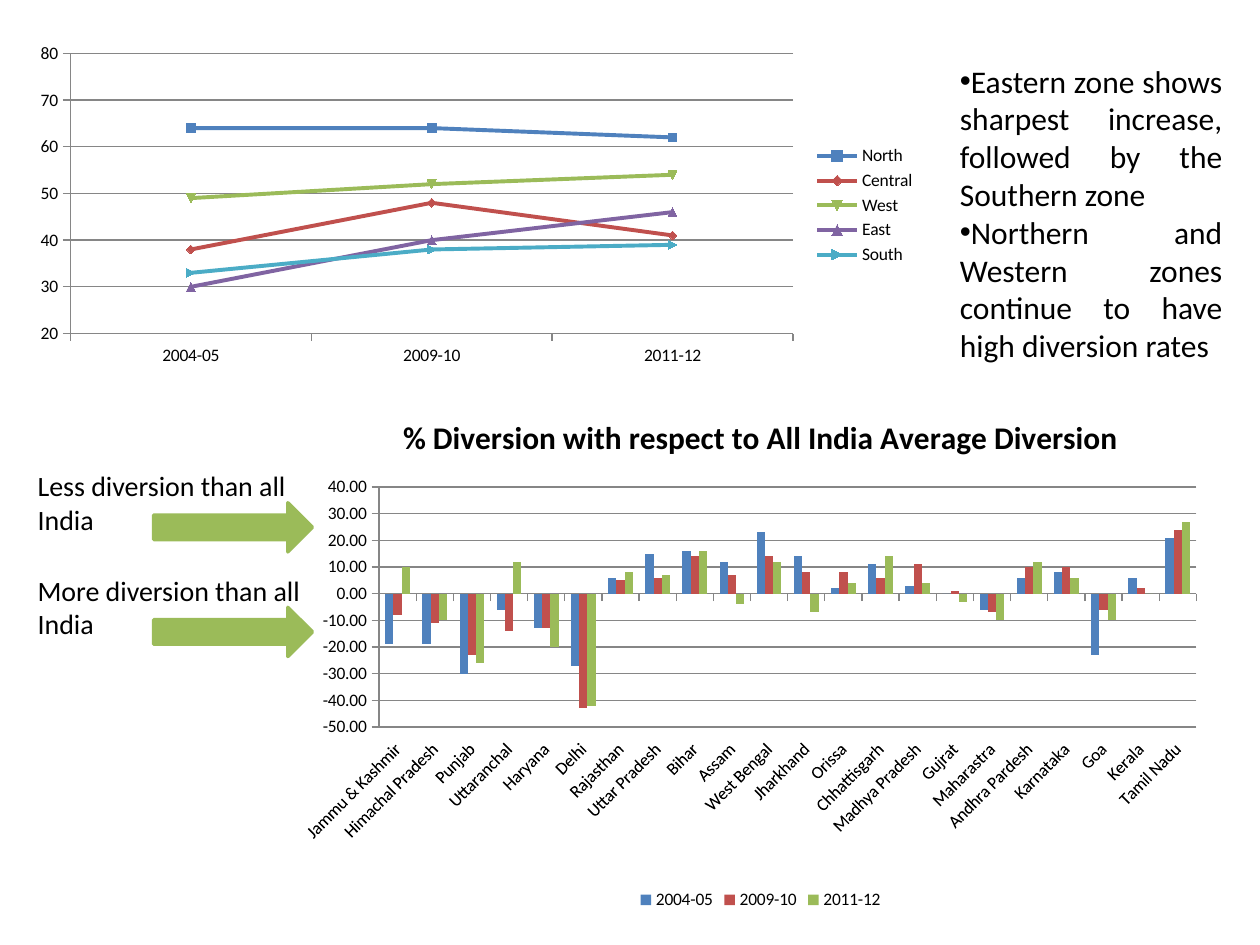
from lxml import etree
from pptx import Presentation
from pptx.chart.data import CategoryChartData
from pptx.dml.color import RGBColor
from pptx.enum.chart import XL_CHART_TYPE, XL_LEGEND_POSITION, XL_TICK_LABEL_POSITION, XL_TICK_MARK
from pptx.enum.shapes import MSO_SHAPE
from pptx.enum.text import PP_ALIGN
from pptx.oxml.ns import qn
from pptx.util import Inches, Pt

LINE, COLUMN = XL_CHART_TYPE.LINE_MARKERS, XL_CHART_TYPE.COLUMN_CLUSTERED
RIGHT, BOTTOM = XL_LEGEND_POSITION.RIGHT, XL_LEGEND_POSITION.BOTTOM
LOW, OUTSIDE, NONE = XL_TICK_LABEL_POSITION.LOW, XL_TICK_MARK.OUTSIDE, XL_TICK_MARK.NONE
RIGHT_ARROW, JUSTIFY = MSO_SHAPE.RIGHT_ARROW, PP_ALIGN.JUSTIFY

THEME = {
    "font": "Calibri", "text": "000000", "axis": "868686", "arrow": "9BBB59",
    "series": ["4F81BD", "C0504D", "9BBB59", "8064A2", "4BACC6"],
    "chart_size": 10, "title_size": 18, "findings_size": 18, "label_size": 16,
}

YEARS = ["2004-05", "2009-10", "2011-12"]
ZONES = {
    "North": [64, 64, 62],
    "Central": [38, 48, 41],
    "West": [49, 52, 54],
    "East": [30, 40, 46],
    "South": [33, 38, 39],
}
STATES = {
    "Jammu & Kashmir": (-19, -8, 10),
    "Himachal Pradesh": (-19, -11, -10),
    "Punjab": (-30, -23, -26),
    "Uttaranchal": (-6, -14, 12),
    "Haryana": (-13, -13, -20),
    "Delhi": (-27, -43, -42),
    "Rajasthan": (6, 5, 8),
    "Uttar Pradesh": (15, 6, 7),
    "Bihar": (16, 14, 16),
    "Assam": (12, 7, -4),
    "West Bengal": (23, 14, 12),
    "Jharkhand": (14, 8, -7),
    "Orissa": (2, 8, 4),
    "Chhattisgarh": (11, 6, 14),
    "Madhya Pradesh": (3, 11, 4),
    "Gujrat": (0, 1, -3),
    "Maharastra": (-6, -7, -10),
    "Andhra Pardesh": (6, 10, 12),
    "Karnataka": (8, 10, 6),
    "Goa": (-23, -6, -10),
    "Kerala": (6, 2, 0),
    "Tamil Nadu": (21, 24, 27),
}
STATE_TITLE = "% Diversion with respect to All India Average Diversion"
FINDINGS = [
    "Eastern zone shows sharpest increase, followed by the Southern zone",
    "Northern and Western zones continue to have high diversion rates",
]
ARROW_LABELS = ["Less diversion than all India", "More diversion than all India"]
LABEL_TOP, LABEL_STEP, ARROW_OFFSET = 3.67, 0.83, 0.32


def color(name):
    return RGBColor.from_string(name)


def set_font(font, size, bold=None):
    font.name = THEME["font"]
    font.size = Pt(size)
    font.bold = bold
    font.color.rgb = color(THEME["text"])


def set_plot_layout(chart, fractions):
    plot_area = chart._chartSpace.chart.plotArea
    for old_layout in plot_area.findall(qn("c:layout")):
        plot_area.remove(old_layout)
    layout = etree.Element(qn("c:layout"))
    manual = etree.SubElement(layout, qn("c:manualLayout"))
    settings = [("layoutTarget", "inner"), ("xMode", "edge"), ("yMode", "edge")]
    settings += zip("xywh", fractions)
    for tag, value in settings:
        etree.SubElement(manual, qn(f"c:{tag}")).set("val", str(value))
    plot_area.insert(0, layout)


def add_chart(slide, kind, box, categories, series, scale, number_format, legend, layout):
    data = CategoryChartData(number_format=number_format)
    data.categories = categories
    for name, values in series.items():
        data.add_series(name, values)
    chart = slide.shapes.add_chart(kind, *map(Inches, box), data).chart
    set_font(chart.font, THEME["chart_size"])
    chart.has_title = False
    chart.has_legend = True
    chart.legend.position = legend
    chart.legend.include_in_layout = False
    for axis in (chart.category_axis, chart.value_axis):
        axis.major_tick_mark = OUTSIDE
        axis.minor_tick_mark = NONE
        axis.format.line.color.rgb = color(THEME["axis"])
    value_axis = chart.value_axis
    value_axis.minimum_scale, value_axis.maximum_scale = scale
    value_axis.major_unit = 10
    value_axis.tick_labels.number_format = number_format
    value_axis.tick_labels.number_format_is_linked = False
    value_axis.has_major_gridlines = True
    value_axis.major_gridlines.format.line.color.rgb = color(THEME["axis"])
    chart.plots[0].vary_by_categories = False
    set_plot_layout(chart, layout)
    return chart


def add_text(slide, box, lines, size):
    frame = slide.shapes.add_textbox(*map(Inches, box)).text_frame
    frame.word_wrap = True
    frame.text = "\n".join(lines)
    for paragraph in frame.paragraphs:
        set_font(paragraph.font, size)
    return frame


def add_zone_chart(slide):
    chart = add_chart(slide, LINE, (0.2, 0.29, 7.17, 2.68), YEARS, ZONES, (20, 80),
                      "General", RIGHT, (0.05, 0.05, 0.8, 0.83))
    for series, tone in zip(chart.plots[0].series, THEME["series"]):
        series.smooth = False
        series.format.line.color.rgb = color(tone)
        series.format.line.width = Pt(2.25)
        series.marker.size = 5
        series.marker.format.fill.solid()
        series.marker.format.fill.fore_color.rgb = color(tone)
        series.marker.format.line.color.rgb = color(tone)


def add_state_chart(slide):
    by_year = dict(zip(YEARS, zip(*STATES.values())))
    chart = add_chart(slide, COLUMN, (2.4, 3.12, 7.24, 4.14), list(STATES), by_year,
                      (-50, 40), "0.00", BOTTOM, (0.08, 0.18, 0.9, 0.46))
    chart.has_title = True
    chart.chart_title.include_in_layout = False
    chart.chart_title.text_frame.text = STATE_TITLE
    set_font(chart.chart_title.text_frame.paragraphs[0].font, THEME["title_size"], True)
    chart.category_axis.tick_label_position = LOW
    chart.plots[0].gap_width = 150
    chart.plots[0].overlap = 0
    for series, tone in zip(chart.plots[0].series, THEME["series"]):
        series.invert_if_negative = False
        series.format.fill.solid()
        series.format.fill.fore_color.rgb = color(tone)


def add_findings(slide):
    frame = add_text(slide, (7.52, 0.44, 2.28, 2.52), FINDINGS, THEME["findings_size"])
    for paragraph in frame.paragraphs:
        paragraph.alignment = JUSTIFY
        properties = paragraph._p.get_or_add_pPr()
        bullet_font = etree.Element(qn("a:buFont"), typeface="Arial")
        bullet = etree.Element(qn("a:buChar"), char="•")
        properties.insert(0, bullet_font)
        properties.insert(1, bullet)


def add_arrow_label(slide, label, top):
    add_text(slide, (0.2, top, 2.28, 0.64), [label], THEME["label_size"])
    box = (1.22, top + ARROW_OFFSET, 1.26, 0.39)
    arrow = slide.shapes.add_shape(RIGHT_ARROW, *map(Inches, box))
    arrow.shadow.inherit = False
    arrow.fill.solid()
    arrow.fill.fore_color.rgb = color(THEME["arrow"])
    arrow.line.color.rgb = color(THEME["arrow"])
    arrow.line.width = Pt(2)


def main():
    presentation = Presentation()
    presentation.slide_width, presentation.slide_height = Inches(10), Inches(7.5)
    slide = presentation.slides.add_slide(presentation.slide_layouts[6])
    add_zone_chart(slide)
    add_state_chart(slide)
    add_findings(slide)
    for index, label in enumerate(ARROW_LABELS):
        add_arrow_label(slide, label, LABEL_TOP + index * LABEL_STEP)
    presentation.save("out.pptx")


if __name__ == "__main__":
    main()
